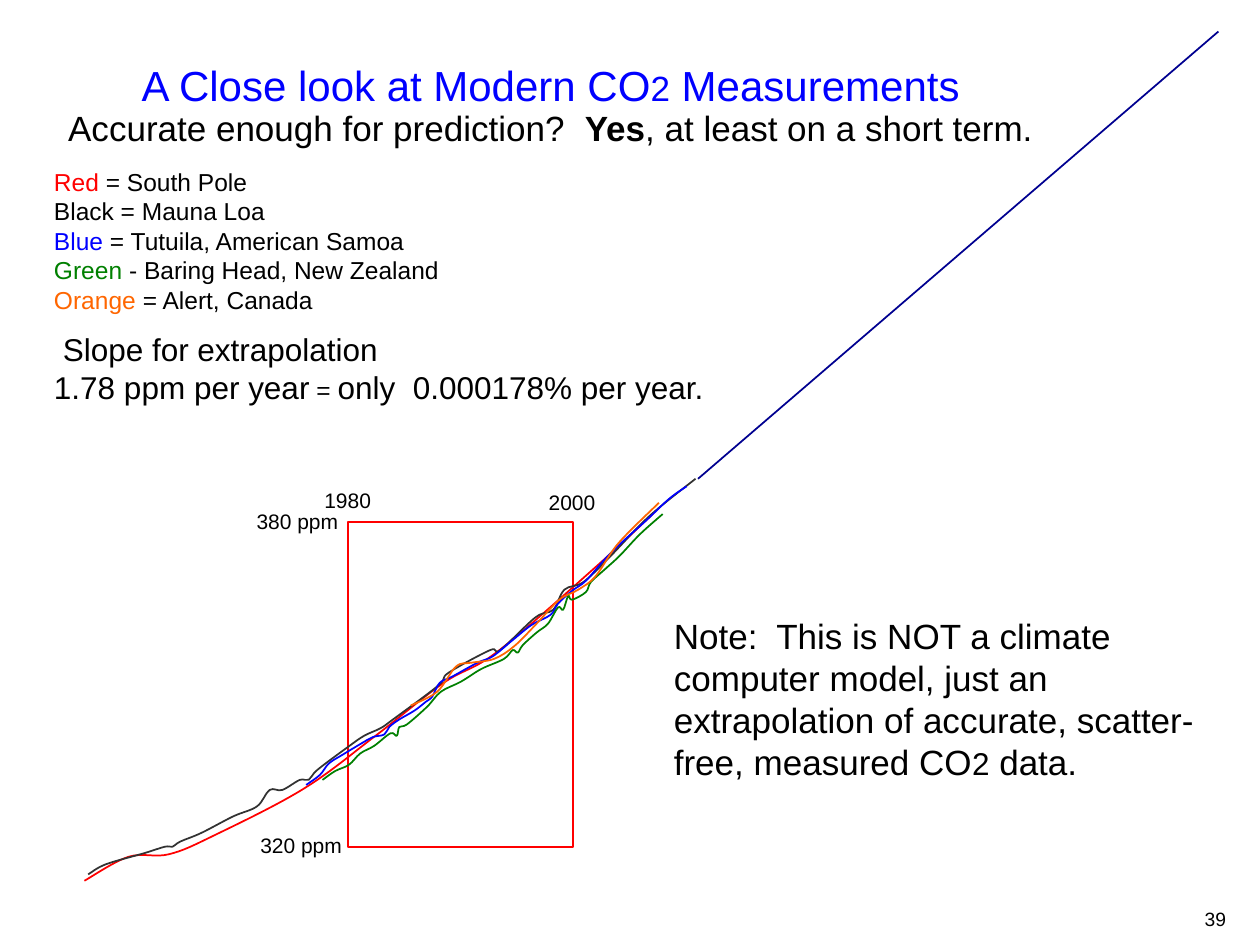
from pptx import Presentation
from pptx.dml.color import RGBColor
from pptx.enum.shapes import MSO_CONNECTOR, MSO_SHAPE
from pptx.enum.text import MSO_ANCHOR, MSO_AUTO_SIZE, PP_ALIGN as Align
from pptx.oxml.ns import qn
from pptx.util import Inches, Pt
from lxml.etree import SubElement

# Content: runs are (text, size, colour, bold)
FONT = "Arial"
BLACK, RED, BLUE, GREEN, ORANGE = "000000", "FF0000", "0000FF", "008000", "FF6600"
CHARCOAL, NAVY = "323232", "000090"

TITLE = [("A Close look at Modern CO", 24, BLUE), ("2", 20, BLUE),
         (" Measurements", 24, BLUE)]
QUESTION = [("Accurate enough for prediction?  ", 20), ("Yes", 20, BLACK, True),
            (", at least on a short term.", 20)]
STATIONS = [("Red ", RED, "= South Pole"), ("Black ", BLACK, "= Mauna Loa"),
            ("Blue ", BLUE, "= Tutuila, American Samoa"),
            ("Green ", GREEN, "- Baring Head, New Zealand"),
            ("Orange ", ORANGE, "= Alert, Canada")]
SLOPE = [("Slope for extrapolation", 18)]
RATE = [("1.78 ppm per year", 18), (" = ", 14), ("only  0.000178% per year.", 18)]
NOTE = [("Note:  This is NOT a climate computer model, just an extrapolation "
         "of accurate, scatter-free, measured CO", 20), ("2", 18), (" data.", 20)]
PAGE_NUMBER = [("39", 11)]

# Chart labels: text, left, top, width
LABELS = [("320 ppm", 1.95, 6.56, 0.88), ("380 ppm", 1.92, 3.99, 0.88),
          ("2000", 4.19, 3.84, 0.7), ("1980", 2.41, 3.82, 0.7)]

# Station curves: points on the curve, newest first, in inches
CURVES = [
    (RED, [(5.19, 4.07), (4.75, 4.48), (3.95, 5.17), (3.52, 5.42), (2.98, 5.84),
           (2.41, 6.26), (1.7, 6.63), (1.34, 6.78), (1.02, 6.8), (0.67, 6.99)]),
    (CHARCOAL, [(5.52, 3.8), (5.15, 4.1), (4.84, 4.42), (4.63, 4.62), (4.48, 4.68),
                (4.39, 4.84), (4.25, 4.9), (3.97, 5.16), (3.89, 5.16), (3.56, 5.34),
                (3.48, 5.44), (3.12, 5.71), (3.02, 5.78), (2.89, 5.84), (2.76, 5.93),
                (2.52, 6.11), (2.45, 6.19), (2.38, 6.19), (2.24, 6.27), (2.14, 6.27),
                (2.04, 6.4), (1.85, 6.48), (1.6, 6.61), (1.43, 6.68), (1.37, 6.72),
                (1.31, 6.72), (1.15, 6.77), (0.84, 6.86), (0.7, 6.94)]),
    (BLUE, [(5.45, 3.86), (5.31, 3.96), (5.13, 4.13), (4.93, 4.31), (4.79, 4.45),
            (4.65, 4.61), (4.54, 4.69), (4.43, 4.79), (4.37, 4.88), (4.22, 4.96),
            (4.07, 5.08), (3.91, 5.21), (3.79, 5.26), (3.59, 5.37), (3.49, 5.42),
            (3.43, 5.53), (3.38, 5.57), (3.29, 5.64), (3.17, 5.71), (3.09, 5.77),
            (3.05, 5.83), (2.96, 5.85), (2.87, 5.9), (2.72, 5.99), (2.61, 6.06),
            (2.54, 6.15), (2.43, 6.23)]),
    (GREEN, [(5.26, 4.08), (5.08, 4.24), (4.92, 4.41), (4.8, 4.52), (4.69, 4.62),
             (4.65, 4.7), (4.54, 4.76), (4.51, 4.73), (4.47, 4.84), (4.43, 4.82),
             (4.35, 4.95), (4.26, 5.02), (4.15, 5.12), (4.11, 5.18), (4.07, 5.16),
             (4, 5.23), (3.82, 5.31), (3.66, 5.41), (3.5, 5.49), (3.39, 5.61),
             (3.23, 5.75), (3.17, 5.77), (3.15, 5.84), (3.1, 5.82), (2.97, 5.92),
             (2.86, 5.98), (2.77, 6.07), (2.66, 6.12), (2.56, 6.19)]),
    (ORANGE, [(5.23, 3.99), (4.91, 4.31), (4.73, 4.57), (4.59, 4.68), (4.44, 4.76),
              (4.25, 4.96), (4.08, 5.13), (3.92, 5.23), (3.74, 5.26), (3.62, 5.29),
              (3.47, 5.49), (3.26, 5.6)]),
]


def colour(hex_code):
    return RGBColor.from_string(hex_code)


def add_runs(para, runs, align=Align.LEFT, before=0):
    para.alignment = align
    para.space_before = Pt(before)
    for text, size, hex_code, bold in [(*run, BLACK, False)[:4] if len(run) == 2
                                       else (*run, False)[:4] for run in runs]:
        span = para.add_run()
        span.text = text
        span.font.name, span.font.size, span.font.bold = FONT, Pt(size), bold
        span.font.color.rgb = colour(hex_code)


def add_text(shapes, place, paragraphs, wrap=True):
    """Each paragraph is (runs, alignment, space before in points)."""
    box = shapes.add_textbox(*map(Inches, place))
    frame = box.text_frame
    frame.word_wrap = wrap
    for index, item in enumerate(paragraphs):
        para = frame.add_paragraph() if index else frame.paragraphs[0]
        add_runs(para, *item)
    return frame


def style_outline(shape, hex_code):
    shape.shadow.inherit = False
    shape.fill.background()
    shape.line.color.rgb = colour(hex_code)
    shape.line.width = Pt(1)


def smooth_points(points):
    """Two control points and an end point for every segment of the curve."""
    padded = [points[0], *points, points[-1]]
    result = []
    for before, start, end, after in zip(padded, padded[1:], padded[2:], padded[3:]):
        result.append(tuple(s + (e - b) / 6 for b, s, e in zip(before, start, end)))
        result.append(tuple(e - (a - s) / 6 for s, e, a in zip(start, end, after)))
        result.append(end)
    return result


def add_curve(shapes, points, hex_code):
    builder = shapes.build_freeform(*map(Inches, points[0]))
    builder.add_line_segments(
        [tuple(map(Inches, point)) for point in smooth_points(points)], close=False)
    curve = builder.convert_to_shape()
    # Join every three line steps into one Bezier step
    steps = list(curve.element.iter(qn("a:lnTo")))
    for first, second, third in zip(steps[::3], steps[1::3], steps[2::3]):
        first.tag = qn("a:cubicBezTo")
        for step in (second, third):
            first.append(step[0])
            step.getparent().remove(step)
    style_outline(curve, hex_code)


def main():
    deck = Presentation()
    deck.slide_width, deck.slide_height = Inches(10), Inches(7.5)
    page = deck.slides.add_slide(deck.slide_layouts[5])

    # Title
    title = page.shapes.title
    title.left, title.top, title.width, title.height = map(
        Inches, (0.33, 0.42, 8.08, 0.48))
    frame = title.text_frame
    frame.auto_size = MSO_AUTO_SIZE.NONE
    frame.vertical_anchor = MSO_ANCHOR.TOP
    frame.word_wrap = True
    add_runs(frame.paragraphs[0], TITLE, Align.CENTER)

    # Question, colour key and slope
    key = [([(name, 14, hex_code), (place, 14)], Align.LEFT, 0 if index else 10.35)
           for index, (name, hex_code, place) in enumerate(STATIONS)]
    frame = add_text(page.shapes, (0.33, 0.8, 8.08, 2.5),
                     [(QUESTION, Align.CENTER), *key,
                      (SLOPE, Align.LEFT, 9.2), (RATE,)])
    slope_para = frame.paragraphs[-2]
    slope_para._p.get_or_add_pPr().set("marL", str(Inches(0.07)))

    # Measurements with the extrapolated line
    chart = page.shapes.add_group_shape().shapes
    window = chart.add_shape(MSO_SHAPE.RECTANGLE,
                             *map(Inches, (2.76, 4.14, 1.79, 2.58)))
    style_outline(window, RED)
    for hex_code, points in CURVES:
        add_curve(chart, points, hex_code)
    for text, left, top, width in LABELS:
        add_text(chart, (left, top, width, 0.3),
                 [([(text, 12)], Align.CENTER)], wrap=False)
    trend = chart.add_connector(MSO_CONNECTOR.STRAIGHT,
                                *map(Inches, (5.54, 3.8, 9.67, 0.25)))
    trend.line.color.rgb = colour(NAVY)
    trend.line.width = Pt(1)
    SubElement(trend.element.spPr, qn("a:effectLst"))

    # Note and page number
    add_text(page.shapes, (5.25, 4.83, 4.33, 1.45), [(NOTE,)])
    add_text(page.shapes, (7.5, 7.15, 2.33, 0.35), [(PAGE_NUMBER, Align.RIGHT)])

    deck.save("out.pptx")


if __name__ == "__main__":
    main()
